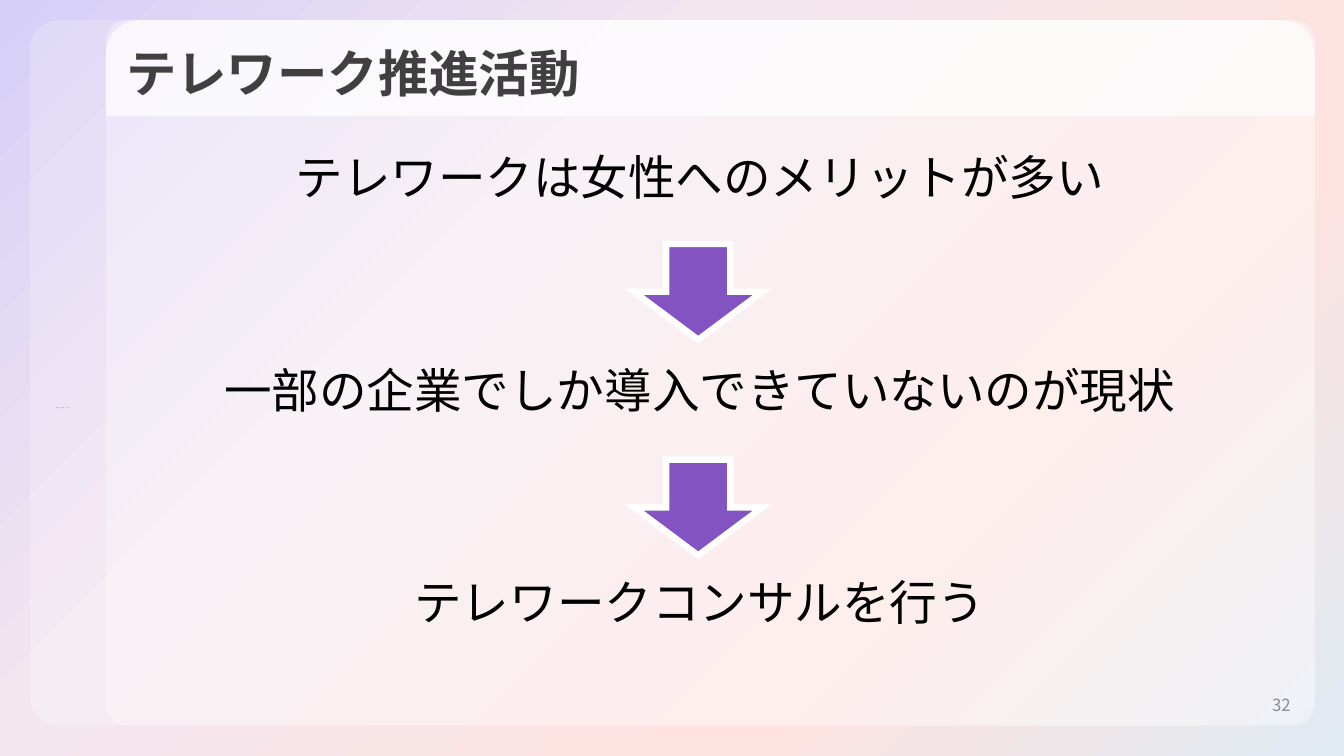
from lxml import etree
from pptx import Presentation
from pptx.dml.color import RGBColor
from pptx.enum.shapes import MSO_SHAPE as SHAPE
from pptx.enum.text import MSO_ANCHOR as ANCHOR, PP_ALIGN as ALIGN
from pptx.oxml.ns import qn
from pptx.util import Inches, Pt

TITLE = "テレワーク推進活動"
STEPS = [
    "テレワークは女性へのメリットが多い",
    "一部の企業でしか導入できていないのが現状",
    "テレワークコンサルを行う",
]
PAGE = "32"
JP, KR = "Noto Sans CJK JP", "Noto Sans CJK KR"
COLORS = {
    "white": "FFFFFF", "title": "404040", "text": "000000",
    "page": "8C8C8C", "arrow": "8354C1", "dash": "AB8BD5",
}
BACKGROUND = [(0, "D6CFF8"), (35, "F3E6EF"), (70, "FEE2DF"), (100, "E0EAF3")]
TITLE_BAR = (1.05, 0.2, 11.99, 0.95)
PANELS = [
    (SHAPE.ROUNDED_RECTANGLE, (0.3, 0.2, 12.74, 7), [0.04], 20),
    (SHAPE.ROUNDED_RECTANGLE, (1.05, 0.2, 11.99, 7), [0.028], 30),
    (SHAPE.ROUND_2_SAME_RECTANGLE, TITLE_BAR, [0.346, 0], 70),
]
DASH_WIDTHS = [0.03, 0.03, 0.02]
DASH_LEFT, DASH_TOP, DASH_PITCH = 0.56, 4.04, 0.05
ARROW_LEFT, ARROW_TOP, ARROW_PITCH = 6.29, 2.42, 2.14
STEP_GAP = 111


def rgb(name):
    return RGBColor.from_string(COLORS[name])


def add_filled(slide, kind, box, color, alpha=100):
    sp = slide.shapes.add_shape(kind, *map(Inches, box))
    sp.shadow.inherit = False
    sp.fill.solid()
    sp.fill.fore_color.rgb = rgb(color)
    sp.line.fill.background()
    if alpha < 100:
        clr = sp.fill._xPr.find(".//" + qn("a:srgbClr"))
        etree.SubElement(clr, qn("a:alpha")).set("val", str(alpha * 1000))
    return sp


def style(p, text, size, color, align, face=JP, bold=False):
    r = p.add_run()
    r.text = text
    p.alignment = align
    f = r.font
    f.size, f.bold, f.name = Pt(size), bold, face
    f.color.rgb = rgb(color)
    etree.SubElement(r._r.get_or_add_rPr(), qn("a:ea")).set("typeface", face)


def setup_frame(sp, anchor, left=0.1, top=0):
    tf = sp.text_frame
    tf.word_wrap = True
    tf.vertical_anchor = anchor
    tf.margin_left, tf.margin_right = Inches(left), Inches(0.1)
    tf.margin_top, tf.margin_bottom = Inches(top), 0
    return tf


def add_text(slide, box, anchor, top=0):
    sp = slide.shapes.add_textbox(*map(Inches, box))
    return setup_frame(sp, anchor, top=top)


def paint_background(slide):
    fill = slide.background.fill
    fill.gradient()
    fill.gradient_angle = 315
    stops = slide.background._cSld.find(".//" + qn("a:gsLst"))
    for gs in list(stops):
        stops.remove(gs)
    for pos, color in BACKGROUND:
        gs = etree.SubElement(stops, qn("a:gs"), pos=str(pos * 1000))
        etree.SubElement(gs, qn("a:srgbClr"), val=color)


def main():
    prs = Presentation()
    prs.slide_width, prs.slide_height = Inches(13.33), Inches(7.5)
    slide = prs.slides.add_slide(prs.slide_layouts[5])
    paint_background(slide)

    for kind, box, adjustments, alpha in PANELS:
        sp = add_filled(slide, kind, box, "white", alpha)
        for i, value in enumerate(adjustments):
            sp.adjustments[i] = value

    title = slide.shapes.title
    title.left, title.top, title.width, title.height = map(Inches, TITLE_BAR)
    slide.shapes._spTree.append(title._element)
    tf = setup_frame(title, ANCHOR.MIDDLE, left=0.2, top=0.08)
    style(tf.paragraphs[0], TITLE, 36, "title", ALIGN.LEFT, bold=True)

    for i, width in enumerate(DASH_WIDTHS):
        box = (DASH_LEFT + i * DASH_PITCH, DASH_TOP, width, 0.01)
        add_filled(slide, SHAPE.ROUNDED_RECTANGLE, box, "dash", 50)

    tf = add_text(slide, (1.34, 1.4, 11.2, 5.54), ANCHOR.TOP, top=0.07)
    for i, step in enumerate(STEPS):
        p = tf.add_paragraph() if i else tf.paragraphs[0]
        style(p, step, 34, "text", ALIGN.CENTER)
        p.space_before = Pt(STEP_GAP if i else 0)

    tf = add_text(slide, (9.9, 6.79, 3, 0.4), ANCHOR.MIDDLE)
    style(tf.paragraphs[0], PAGE, 12, "page", ALIGN.RIGHT, KR)

    for i in range(len(STEPS) - 1):
        box = (ARROW_LEFT, ARROW_TOP + i * ARROW_PITCH, 1.27, 0.95)
        sp = add_filled(slide, SHAPE.DOWN_ARROW, box, "arrow")
        sp.line.color.rgb = rgb("white")
        sp.line.width = Pt(4.5)
        ln = sp._element.spPr.find(qn("a:ln"))
        etree.SubElement(ln, qn("a:miter"), lim="800000")

    prs.save("out.pptx")


if __name__ == "__main__":
    main()
